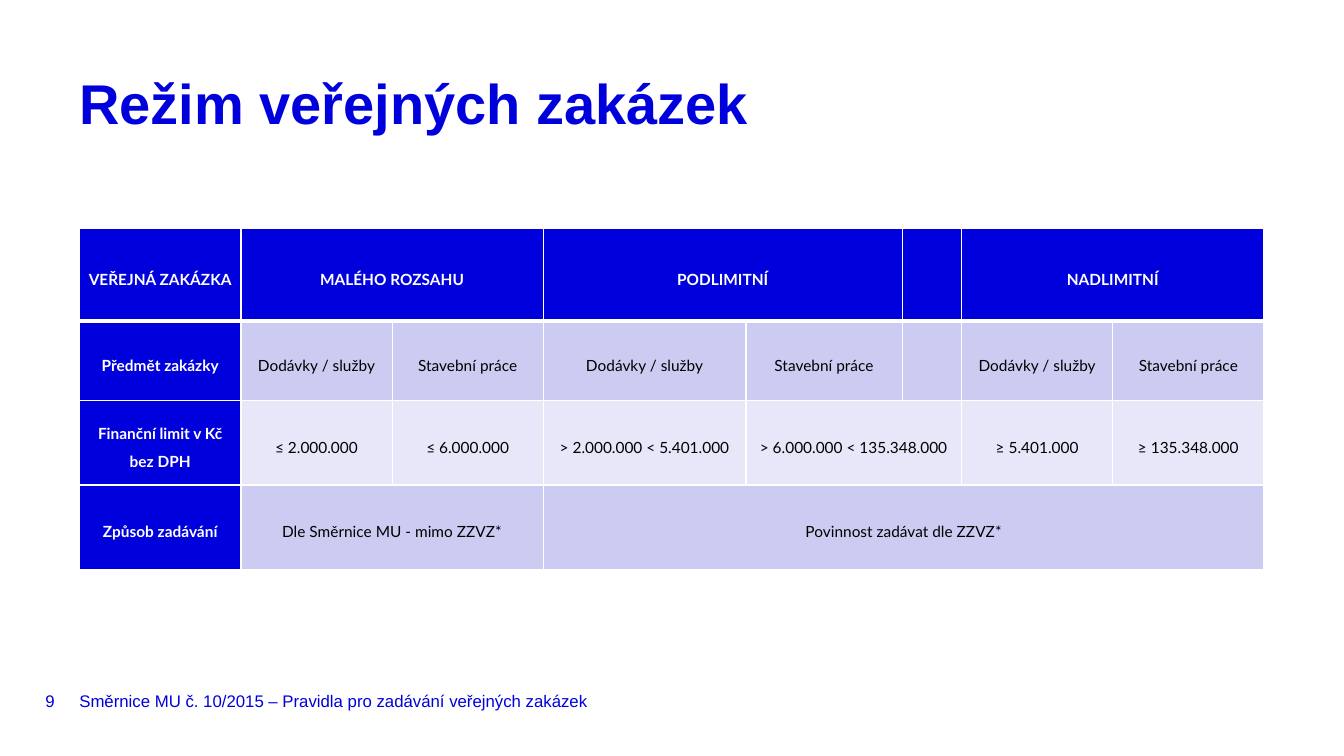
from lxml.etree import SubElement
from pptx import Presentation
from pptx.dml.color import RGBColor
from pptx.enum.text import MSO_ANCHOR, MSO_AUTO_SIZE, PP_ALIGN
from pptx.oxml.ns import qn
from pptx.util import Pt

BLUE = RGBColor(0x00, 0x00, 0xDC)
BAND = RGBColor(0xCC, 0xCC, 0xF2)
PALE = RGBColor(0xE7, 0xE7, 0xF9)
WHITE = RGBColor(0xFF, 0xFF, 0xFF)
BLACK = RGBColor(0x00, 0x00, 0x00)

COLS = [115.2, 108, 108, 144.72, 111.6, 42.48, 108, 108]
ROWS = [66.24, 56.88, 60.48, 60.48]
FILLS = [BLUE, BAND, PALE, BAND]
GOODS, WORKS = "Dodávky / služby", "Stavební práce"
CELLS = [
    [("VEŘEJNÁ ZAKÁZKA", 1), ("MALÉHO ROZSAHU", 2), ("PODLIMITNÍ", 2), ("", 1),
     ("NADLIMITNÍ", 2)],
    [("Předmět zakázky", 1), (GOODS, 1), (WORKS, 1), (GOODS, 1), (WORKS, 1),
     ("", 1), (GOODS, 1), (WORKS, 1)],
    [("Finanční limit v Kč bez DPH", 1), ("≤ 2.000.000", 1), ("≤ 6.000.000", 1),
     ("> 2.000.000 < 5.401.000", 1), ("> 6.000.000 < 135.348.000", 2),
     ("≥ 5.401.000", 1), ("≥ 135.348.000", 1)],
    [("Způsob zadávání", 1), ("Dle Směrnice MU - mimo ZZVZ*", 2),
     ("Povinnost zadávat dle ZZVZ*", 5)],
]


class Deck:
    """Holds the presentation, the current slide and its text style."""

    def __init__(self, width, height):
        """Open a presentation with one title-only slide."""
        self.prs = Presentation()
        self.prs.slide_width, self.prs.slide_height = Pt(width), Pt(height)
        self.s = self.prs.slides.add_slide(self.prs.slide_layouts[5])
        self.frame = {"margin_left": 0, "margin_top": 0, "margin_right": 0,
                      "margin_bottom": 0, "auto_size": MSO_AUTO_SIZE.NONE}

    def add_text(self, tf, text, color, para, **font):
        """Put one formatted run into the first paragraph."""
        p = tf.paragraphs[0]
        for name, value in para.items():
            setattr(p, name, value)
        r = p.add_run()
        r.text = text
        for name, value in font.items():
            setattr(r.font, name, value)
        r.font.color.rgb = color

    def set_frame(self, tf, **extra):
        """Apply the shared frame style with overrides."""
        for name, value in {**self.frame, **extra}.items():
            setattr(tf, name, value)

    def title(self, text, x, y, w, h):
        """Place and fill the title placeholder."""
        sp = self.s.shapes.title
        sp.left, sp.top, sp.width, sp.height = Pt(x), Pt(y), Pt(w), Pt(h)
        self.set_frame(sp.text_frame, vertical_anchor=MSO_ANCHOR.TOP, word_wrap=True)
        para = {"alignment": PP_ALIGN.LEFT, "line_spacing": Pt(40)}
        self.add_text(sp.text_frame, text, BLUE, para, name="Arial", size=Pt(40), bold=True)

    def label(self, text, x, y, w, h, wrap=True):
        """Add a small footer text."""
        tf = self.s.shapes.add_textbox(Pt(x), Pt(y), Pt(w), Pt(h)).text_frame
        self.set_frame(tf, vertical_anchor=MSO_ANCHOR.MIDDLE, word_wrap=wrap)
        self.add_text(tf, text, BLUE, {"alignment": PP_ALIGN.LEFT}, name="Arial", size=Pt(12))

    def borders(self, cell, row):
        """Draw white cell borders, thicker under the header row."""
        widths = {"a:lnL": 1, "a:lnR": 1, "a:lnT": 3 if row == 1 else 1,
                  "a:lnB": 3 if row == 0 else 1}
        for tag, width in widths.items():
            ln = SubElement(cell._tc.get_or_add_tcPr(), qn(tag), w=str(Pt(width)))
            SubElement(SubElement(ln, qn("a:solidFill")), qn("a:srgbClr"), val=str(WHITE))

    def cell(self, cell, text, head):
        """Put centred text into a table cell."""
        style = {"margin_left": Pt(5), "margin_right": Pt(5), "margin_top": 0,
                 "margin_bottom": 0, "vertical_anchor": MSO_ANCHOR.MIDDLE}
        for name, value in style.items():
            setattr(cell, name, value)
        para = {"alignment": PP_ALIGN.CENTER, "line_spacing": 1.5}
        self.add_text(cell.text_frame, text, WHITE if head else BLACK, para,
                      name="Lato", size=Pt(11), bold=head)

    def table(self, x, y):
        """Add the table with merged cells, fills and borders."""
        t = self.s.shapes.add_table(len(ROWS), len(COLS), Pt(x), Pt(y),
                                    Pt(sum(COLS)), Pt(sum(ROWS))).table
        t.horz_banding = False
        for col, width in zip(t.columns, COLS):
            col.width = Pt(width)
        for i, (height, cells) in enumerate(zip(ROWS, CELLS)):
            t.rows[i].height = Pt(height)
            for j in range(len(COLS)):
                self.borders(t.cell(i, j), i)
                t.cell(i, j).fill.solid()
                t.cell(i, j).fill.fore_color.rgb = BLUE if j == 0 else FILLS[i]
            j = 0
            for text, span in cells:
                if span > 1:
                    t.cell(i, j).merge(t.cell(i, j + span - 1))
                if text:
                    self.cell(t.cell(i, j), text, i == 0 or j == 0)
                j += span


def main():
    """Build and save the slide."""
    d = Deck(960, 540)
    d.label("Směrnice MU č. 10/2015 – Pravidla pro zadávání veřejných zakázek",
            56.7, 490.3, 623.5, 20)
    d.label("9", 32.4, 490.3, 20, 20, wrap=False)
    d.title("Režim veřejných zakázek", 56.7, 56.7, 846.7, 35.3)
    d.table(56.9, 162.9)
    d.prs.save("out.pptx")


if __name__ == "__main__":
    main()
